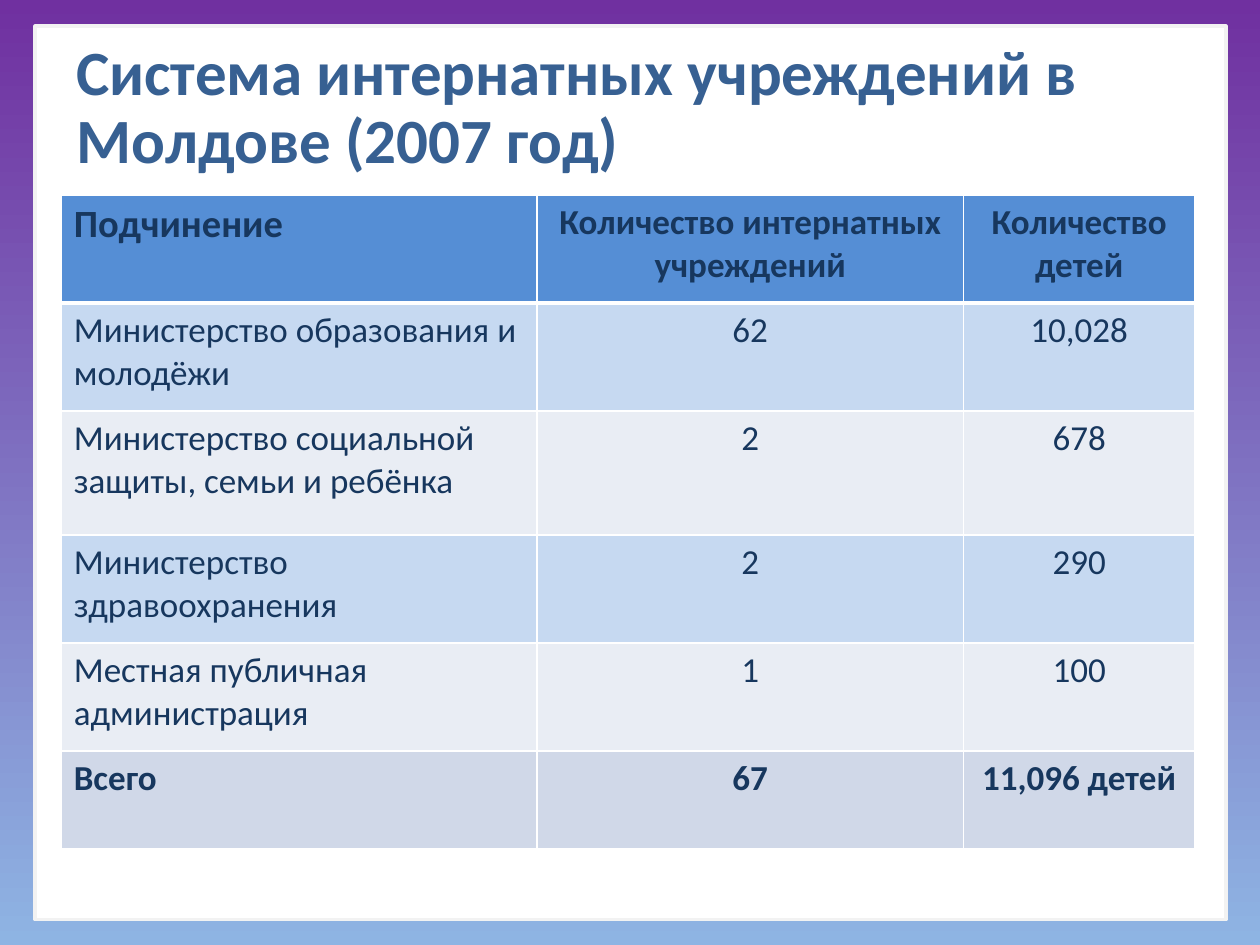
"""Build a slide with a table of residential institutions in Moldova."""
import pptx
import pptx.dml.color
import pptx.enum.shapes
import pptx.enum.text
import pptx.oxml
import pptx.oxml.ns
import pptx.util
from pptx.util import Pt


def color(value):
    return pptx.dml.color.RGBColor.from_string(value)


def add_border(cell, side, width):
    cell._tc.get_or_add_tcPr().append(pptx.oxml.parse_xml(
        f'<a:{side} {pptx.oxml.ns.nsdecls("a")} w="{Pt(width)}">'
        f'<a:solidFill><a:srgbClr val="FFFFFF"/></a:solidFill></a:{side}>'))


presentation = pptx.Presentation()
presentation.slide_width, presentation.slide_height = Pt(720), Pt(540)
slide = presentation.slides.add_slide(presentation.slide_layouts[6])

backdrop = slide.background.fill
backdrop.gradient()
backdrop.gradient_angle = 270
for stop, shade in zip(backdrop.gradient_stops, ("7030A0", "8EB4E3")):
    stop.color.rgb = color(shade)
backdrop.gradient_stops[0].position = 0
backdrop.gradient_stops[1].position = 1

panel = slide.shapes.add_shape(
    pptx.enum.shapes.MSO_SHAPE.RECTANGLE, Pt(20), Pt(15), Pt(680.5), Pt(510.5))
panel.shadow.inherit = False
panel.fill.solid()
panel.fill.fore_color.rgb = color("FFFFFF")
panel.line.color.rgb = color("F2F2F2")
panel.line.width = Pt(2)

title = slide.shapes.add_textbox(Pt(36.5), Pt(20), Pt(648), Pt(68.5)).text_frame
title.word_wrap = True
title.vertical_anchor = pptx.enum.text.MSO_ANCHOR.TOP
heading = title.paragraphs[0]
heading.text = "Система интернатных учреждений в Молдове (2007 год)"
heading.line_spacing = 0.9
heading.font.name = "Calibri"
heading.font.size = Pt(36)
heading.font.bold = True
heading.font.color.rgb = color("376092")

institutions = [
    ("Подчинение", "Количество интернатных учреждений", "Количество детей"),
    ("Министерство образования и молодёжи", "62", "10,028"),
    ("Министерство социальной защиты, семьи и ребёнка", "2", "678"),
    ("Министерство здравоохранения", "2", "290"),
    ("Местная публичная администрация", "1", "100"),
    ("Всего", "67", "11,096 детей"),
]
column_widths = (271.75, 244, 132)
row_heights = (61.75, 61.75, 70.75, 61.75, 61.75, 56)
row_fills = ("558ED5", "C6D9F1", "E9EDF4", "C6D9F1", "E9EDF4", "D0D8E8")
last = len(institutions) - 1

table = slide.shapes.add_table(
    len(institutions), len(column_widths), Pt(35), Pt(111.5),
    Pt(sum(column_widths)), Pt(sum(row_heights))).table
for column, width in zip(table.columns, column_widths):
    column.width = Pt(width)

for r, (entries, height, row_fill) in enumerate(zip(institutions, row_heights, row_fills)):
    table.rows[r].height = Pt(height)
    for c, entry in enumerate(entries):
        cell = table.cell(r, c)
        add_border(cell, "lnL", 1)
        add_border(cell, "lnR", 1)
        add_border(cell, "lnT", 3 if r == 1 else 1)
        add_border(cell, "lnB", 3 if r == 0 else 1)
        cell.fill.solid()
        cell.fill.fore_color.rgb = color(row_fill)
        cell.text = entry
        paragraph = cell.text_frame.paragraphs[0]
        if c > 0:
            paragraph.alignment = pptx.enum.text.PP_ALIGN.CENTER
        paragraph.font.name = "Calibri"
        paragraph.font.size = Pt(22 if r == c == 0 else 20)
        paragraph.font.bold = r in (0, last)
        paragraph.font.color.rgb = color("17375E")

presentation.save("out.pptx")
